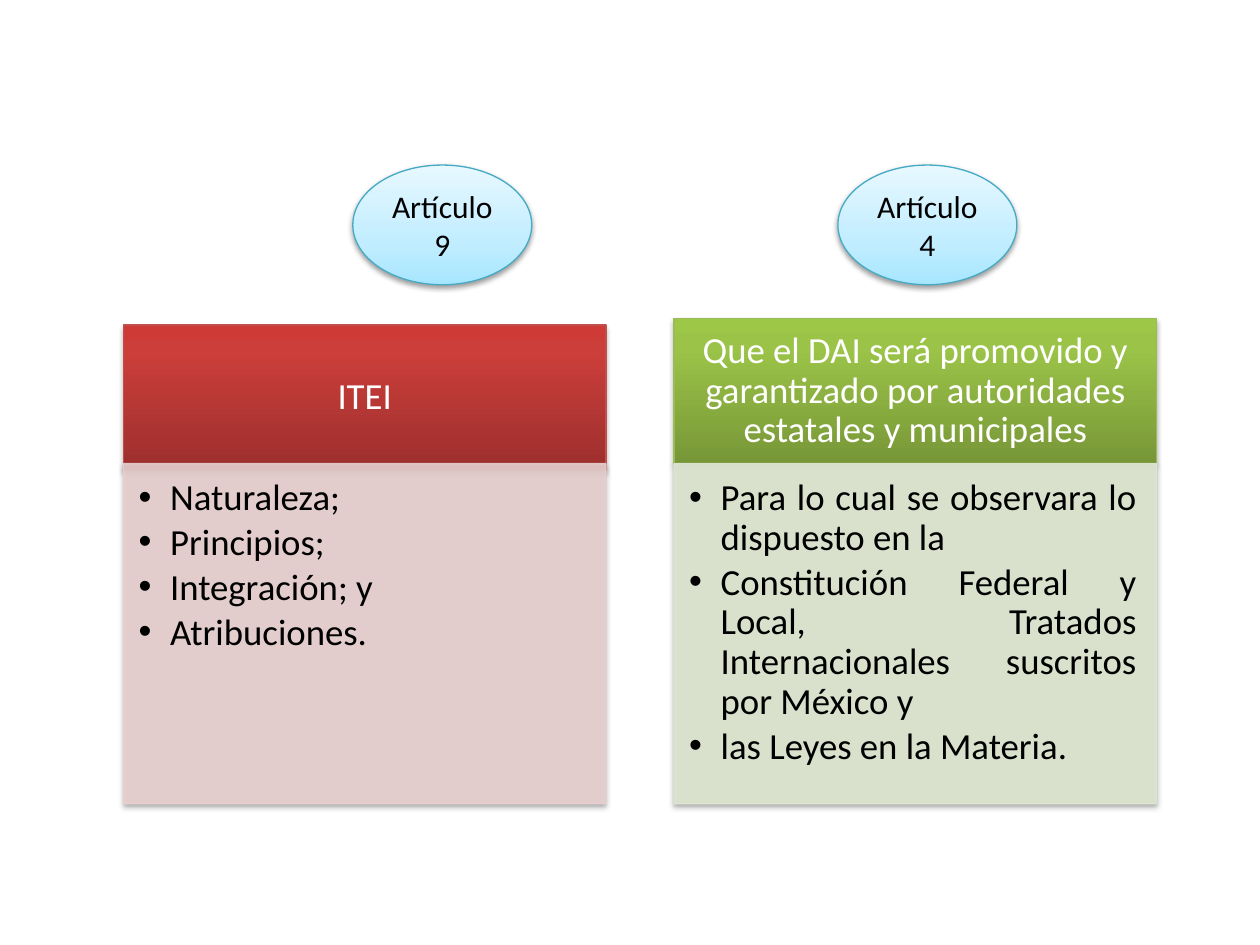
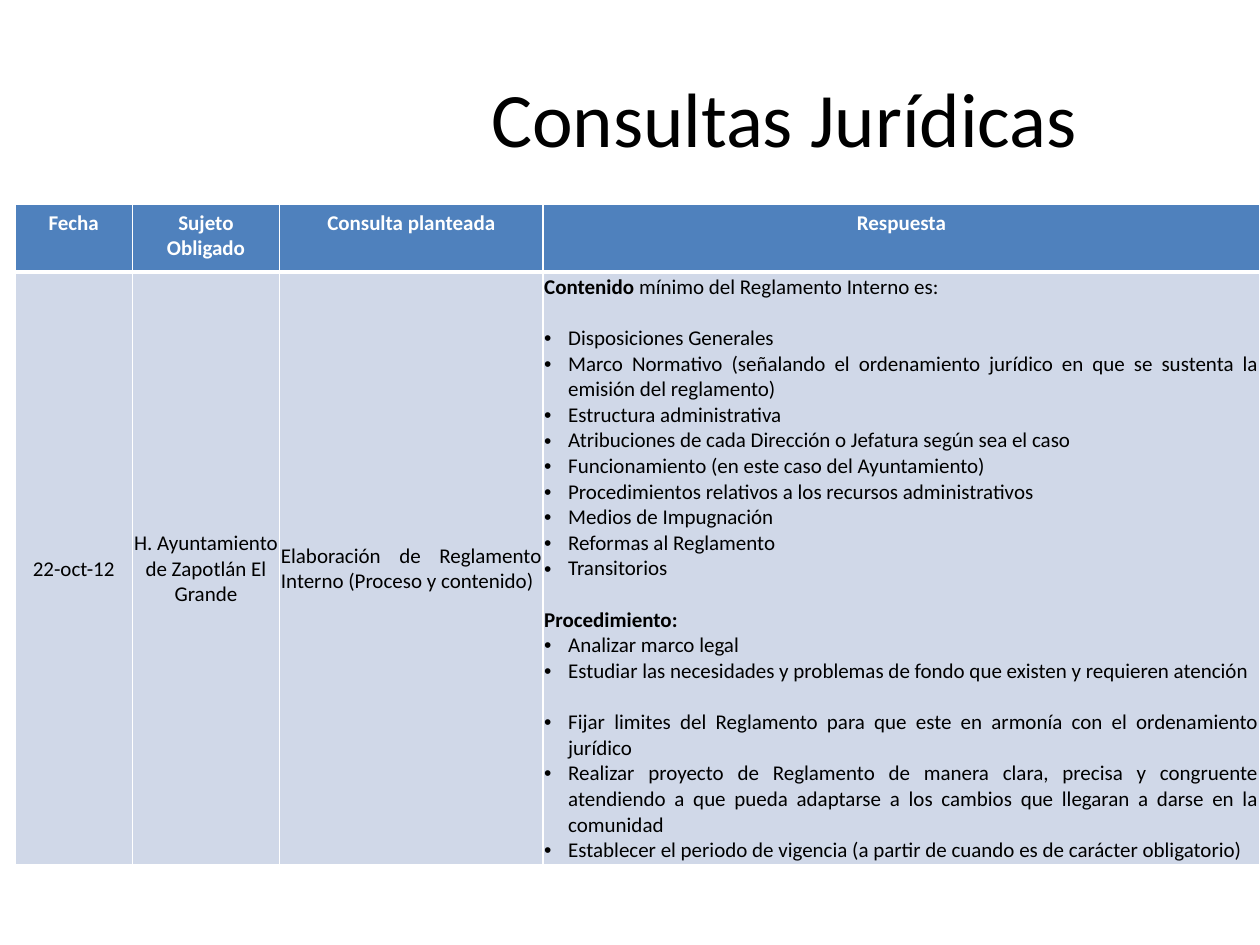
from copy import deepcopy
from dataclasses import dataclass
from typing import Any

from lxml.etree import SubElement
from pptx import Presentation
from pptx.dml.color import RGBColor
from pptx.enum.shapes import MSO_SHAPE
from pptx.enum.text import MSO_ANCHOR, PP_ALIGN
from pptx.oxml.ns import qn
from pptx.util import Inches, Pt

FONT = "Calibri"
BLACK, WHITE = "000000", "FFFFFF"
TABLE_HEADER, TABLE_BODY = "4F81BD", "D0D8E8"
OVAL_STOPS = ((0, "A7E6FF"), (0.35, "C1EDFF"), (1, "E7F8FF"))
OVAL_LINE = "46AAC5"
PANEL_LEFT, PANEL_STEP, PANEL_WIDTH = 0.98, 4.37, 3.83
HEADING_HEIGHT, BODY_TOP, BODY_HEIGHT = 1.15, 3.68, 2.7
BLANK_LINE = Pt(14.65)


@dataclass(frozen=True)
class Panel:
    article: str
    oval_left: float
    heading: str
    heading_top: float
    stops: tuple[tuple[float, str], ...]
    line: str
    body: str
    alignment: PP_ALIGN
    items: tuple[str, ...]


@dataclass(frozen=True)
class Line:
    text: str
    lead: str = ""
    bullet: bool = True
    gap: bool = False


@dataclass(frozen=True)
class Column:
    header: str
    width: float
    alignment: PP_ALIGN
    lines: tuple[Line, ...]


PANELS = (
    Panel("Artículo 9", 2.8, "ITEI", 2.58,
          ((0, "9C2F2D"), (0.8, "CB3E3A"), (1, "CE3B37")),
          "C0504D", "E8D0D0", PP_ALIGN.LEFT,
          ("Naturaleza;", "Principios;", "Integración; y", "Atribuciones.")),
    Panel("Artículo 4", 6.65,
          "Que el DAI será promovido y garantizado por autoridades estatales y municipales", 2.53,
          ((0, "779737"), (0.8, "9BC348"), (1, "9DC746")),
          "9BBB59", "DEE7D1", PP_ALIGN.JUSTIFY,
          ("Para lo cual se observara lo dispuesto en la",
           "Constitución Federal y Local, Tratados Internacionales suscritos por México y",
           "las Leyes en la Materia.")),
)

ANSWER = (
    Line("mínimo del Reglamento Interno es:", lead="Contenido ", bullet=False),
    Line("Disposiciones Generales", gap=True),
    Line("Marco Normativo (señalando el ordenamiento jurídico en que se sustenta la emisión del reglamento)"),
    Line("Estructura administrativa"),
    Line("Atribuciones de cada Dirección o Jefatura según sea el caso"),
    Line("Funcionamiento (en este caso del Ayuntamiento)"),
    Line("Procedimientos relativos a los recursos administrativos"),
    Line("Medios de Impugnación"),
    Line("Reformas al Reglamento"),
    Line("Transitorios"),
    Line("", lead="Procedimiento:", bullet=False, gap=True),
    Line("Analizar marco legal"),
    Line("Estudiar las necesidades y problemas de fondo que existen y requieren atención"),
    Line("Fijar limites del Reglamento para que este en armonía con el ordenamiento jurídico", gap=True),
    Line("Realizar proyecto de Reglamento de manera clara, precisa y congruente atendiendo a que "
         "pueda adaptarse a los cambios que llegaran a darse en la comunidad"),
    Line("Establecer el periodo de vigencia (a partir de cuando es de carácter obligatorio)"),
)

COLUMNS = (
    Column("Fecha", 0.93, PP_ALIGN.CENTER, (Line("22-oct-12", bullet=False),)),
    Column("Sujeto Obligado", 1.17, PP_ALIGN.CENTER,
           (Line("H. Ayuntamiento de Zapotlán El Grande", bullet=False),)),
    Column("Consulta planteada", 2.09, PP_ALIGN.JUSTIFY,
           (Line("Elaboración de Reglamento Interno (Proceso y contenido)", bullet=False),)),
    Column("Respuesta", 5.69, PP_ALIGN.JUSTIFY, ANSWER),
)


def color(value: str) -> RGBColor:
    return RGBColor.from_string(value)


def assign(target: Any, values: dict[str, Any]) -> None:
    for name, value in values.items():
        setattr(target, name, value)


def margins(left: float, top: float, right: float, bottom: float) -> dict[str, Any]:
    sides = zip(("left", "top", "right", "bottom"), (left, top, right, bottom))
    return {f"margin_{side}": Inches(size) for side, size in sides}


def add_run(paragraph: Any, text: str, size: float, text_color: str, bold: bool = False) -> None:
    if not text:
        return
    run = paragraph.add_run()
    run.text = text
    assign(run.font, {"name": FONT, "size": Pt(size), "bold": bold})
    run.font.color.rgb = color(text_color)


def add_bullet(paragraph: Any, indent: float) -> None:
    properties = paragraph._p.get_or_add_pPr()
    properties.set("marL", str(Inches(indent)))
    properties.set("indent", str(-Inches(indent)))
    SubElement(properties, qn("a:buFont")).set("typeface", "Arial")
    SubElement(properties, qn("a:buChar")).set("char", "•")


def next_paragraph(frame: Any, index: int) -> Any:
    return frame.add_paragraph() if index else frame.paragraphs[0]


def add_shadow(shape: Any, opacity: int, distance: float) -> None:
    shape.shadow.inherit = False
    effects = shape._element.spPr.find(qn("a:effectLst"))
    shadow = SubElement(effects, qn("a:outerShdw"), blurRad=str(Pt(3.1)),
                        dist=str(Pt(distance)), dir="5400000", rotWithShape="0")
    shade = SubElement(shadow, qn("a:srgbClr"), val=BLACK)
    SubElement(shade, qn("a:alpha"), val=str(opacity * 1000))


def add_box(slide: Any, kind: MSO_SHAPE, place: tuple[float, ...], line: str,
            shadow: tuple[int, float]) -> Any:
    shape = slide.shapes.add_shape(kind, *map(Inches, place))
    shape.line.color.rgb = color(line)
    shape.line.width = Pt(0.75)
    add_shadow(shape, *shadow)
    shape.text_frame.word_wrap = True
    return shape


def fill_gradient(shape: Any, stops: tuple[tuple[float, str], ...]) -> None:
    shape.fill.gradient()
    shape.fill.gradient_angle = 90
    stop_list = shape._element.spPr.find(".//" + qn("a:gsLst"))
    stop_list.append(deepcopy(stop_list[0]))
    for stop, (position, value) in zip(shape.fill.gradient_stops, stops):
        stop.position = position
        stop.color.rgb = color(value)


def fill_translucent(shape: Any, value: str) -> None:
    shape.fill.solid()
    shape.fill.fore_color.rgb = color(value)
    for shade in shape._element.spPr.findall(".//" + qn("a:srgbClr")):
        if shade.get("val") == value:
            SubElement(shade, qn("a:alpha"), val="90000")


def add_label(shape: Any, text: str, size: float, text_color: str, spacing: float) -> None:
    shape.text_frame.vertical_anchor = MSO_ANCHOR.MIDDLE
    paragraph = shape.text_frame.paragraphs[0]
    assign(paragraph, {"alignment": PP_ALIGN.CENTER, "line_spacing": spacing})
    add_run(paragraph, text, size, text_color)


def add_panel(slide: Any, panel: Panel, left: float) -> None:
    heading = add_box(slide, MSO_SHAPE.RECTANGLE,
                      (left, panel.heading_top, PANEL_WIDTH, HEADING_HEIGHT), panel.line, (35, 1.8))
    fill_gradient(heading, panel.stops)
    assign(heading.text_frame, margins(0.16, 0.09, 0.16, 0.09))
    add_label(heading, panel.heading, 21, WHITE, 0.9)

    body = add_box(slide, MSO_SHAPE.RECTANGLE,
                   (left, BODY_TOP, PANEL_WIDTH, BODY_HEIGHT), panel.body, (35, 1.8))
    fill_translucent(body, panel.body)
    assign(body.text_frame, margins(0.12, 0.12, 0.16, 0.18) | {"vertical_anchor": MSO_ANCHOR.TOP})
    for index, item in enumerate(panel.items):
        paragraph = next_paragraph(body.text_frame, index)
        add_bullet(paragraph, 0.25)
        assign(paragraph, {"alignment": panel.alignment, "line_spacing": 0.9, "space_after": Pt(3)})
        add_run(paragraph, item, 21, BLACK)


def add_article(slide: Any, panel: Panel) -> None:
    oval = add_box(slide, MSO_SHAPE.OVAL, (panel.oval_left, 1.31, 1.42, 0.95), OVAL_LINE, (38, 1.6))
    fill_gradient(oval, OVAL_STOPS)
    add_label(oval, panel.article, 18, BLACK, 1.0)


def style_cell(cell: Any, fill: str, edges: dict[str, float]) -> None:
    properties = cell._tc.get_or_add_tcPr()
    for side, width in edges.items():
        edge = SubElement(properties, qn(f"a:ln{side}"), w=str(Pt(width)))
        SubElement(SubElement(edge, qn("a:solidFill")), qn("a:srgbClr"), val=WHITE)
    cell.fill.solid()
    cell.fill.fore_color.rgb = color(fill)


def fill_header(cell: Any, text: str) -> None:
    style_cell(cell, TABLE_HEADER, {"L": 1, "R": 1, "T": 1, "B": 3})
    paragraph = cell.text_frame.paragraphs[0]
    paragraph.alignment = PP_ALIGN.CENTER
    add_run(paragraph, text, 12, WHITE, True)


def fill_body(cell: Any, column: Column) -> None:
    style_cell(cell, TABLE_BODY, {"L": 1, "R": 1, "T": 3, "B": 1})
    assign(cell, margins(0.01, 0.01, 0.01, 0) | {"vertical_anchor": MSO_ANCHOR.MIDDLE})
    for index, line in enumerate(column.lines):
        paragraph = next_paragraph(cell.text_frame, index)
        if line.bullet:
            add_bullet(paragraph, 0.19)
        paragraph.alignment = column.alignment
        if line.gap:
            paragraph.space_before = BLANK_LINE
        add_run(paragraph, line.lead, 12, BLACK, True)
        add_run(paragraph, line.text, 12, BLACK)


def add_articles_slide(presentation: Any) -> None:
    slide = presentation.slides.add_slide(presentation.slide_layouts[6])
    for index, panel in enumerate(PANELS):
        add_panel(slide, panel, PANEL_LEFT + index * PANEL_STEP)
        add_article(slide, panel)


def add_queries_slide(presentation: Any) -> None:
    slide = presentation.slides.add_slide(presentation.slide_layouts[5])
    title = slide.shapes.title
    assign(title, {"left": Inches(2.95), "top": Inches(0.3),
                   "width": Inches(6.55), "height": Inches(1.25)})
    add_label(title, "Consultas Jurídicas", 44, BLACK, 1.0)

    table = slide.shapes.add_table(2, len(COLUMNS), Inches(0.12), Inches(1.62),
                                   Inches(9.88), Inches(5.24)).table
    assign(table, {"first_row": False, "horz_banding": False})
    for row, height in zip(table.rows, (0.54, 4.7)):
        row.height = Inches(height)
    for index, column in enumerate(COLUMNS):
        table.columns[index].width = Inches(column.width)
        fill_header(table.cell(0, index), column.header)
        fill_body(table.cell(1, index), column)


def main() -> None:
    presentation = Presentation()
    assign(presentation, {"slide_width": Inches(10), "slide_height": Inches(7.5)})
    add_articles_slide(presentation)
    add_queries_slide(presentation)
    presentation.save("out.pptx")


if __name__ == "__main__":
    main()
